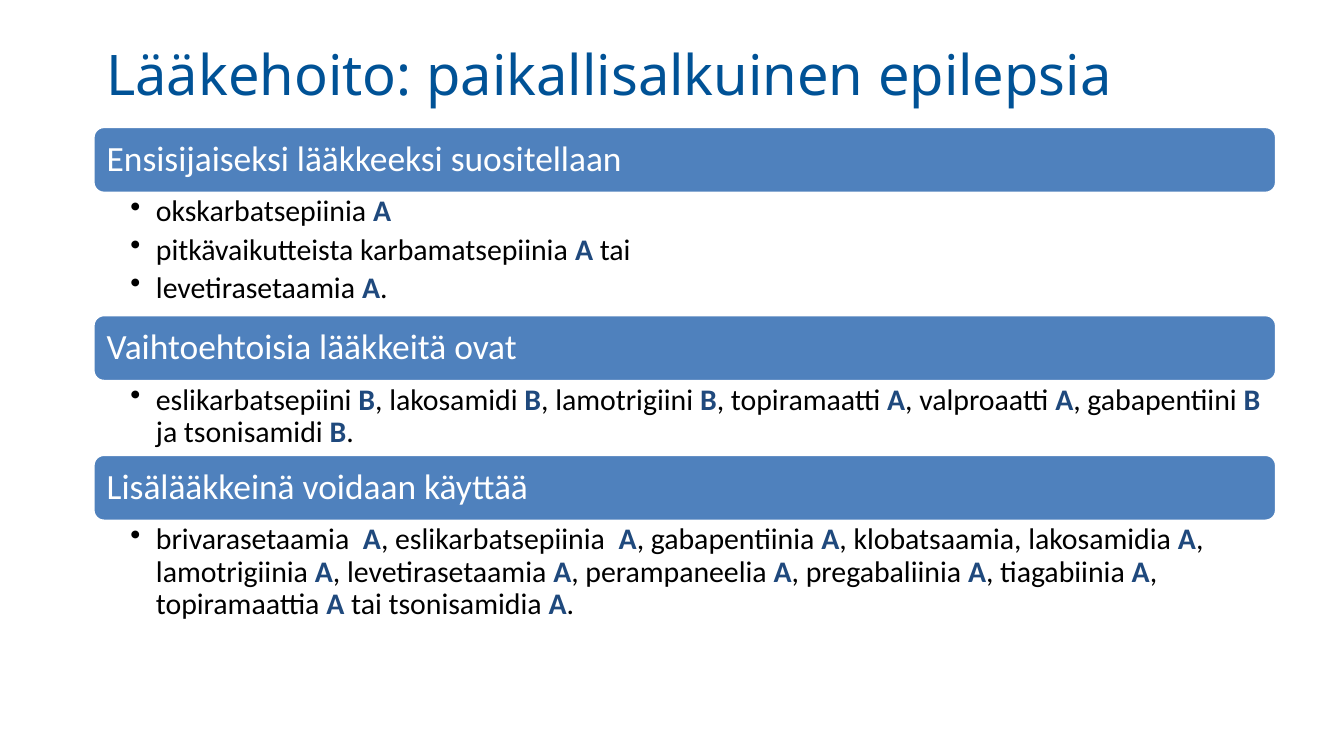
"""Build a slide on drug treatment of focal-onset epilepsy."""
from lxml.etree import SubElement
from pptx import Presentation
from pptx.dml.color import RGBColor
from pptx.enum.shapes import MSO_SHAPE
from pptx.enum.text import MSO_ANCHOR, PP_ALIGN
from pptx.oxml.ns import qn
from pptx.util import Inches, Pt

TITLE = "Lääkehoito: paikallisalkuinen epilepsia"
SECTIONS = [
    ("Ensisijaiseksi lääkkeeksi suositellaan", 0.9, [
        "okskarbatsepiinia *A*",
        "pitkävaikutteista karbamatsepiinia *A* tai",
        "levetirasetaamia *A*.",
    ]),
    ("Vaihtoehtoisia lääkkeitä ovat", 0.54, [
        "eslikarbatsepiini *B*, lakosamidi *B*, lamotrigiini *B*, topiramaatti *A*, "
        "valproaatti *A*, gabapentiini *B* ja tsonisamidi *B*.",
    ]),
    ("Lisälääkkeinä voidaan käyttää", 0.8, [
        "brivarasetaamia  *A*, eslikarbatsepiinia  *A*, gabapentiinia *A*, "
        "klobatsaamia, lakosamidia *A*, lamotrigiinia *A*, levetirasetaamia *A*, "
        "perampaneelia *A*, pregabaliinia *A*, tiagabiinia *A*, "
        "topiramaattia *A *tai tsonisamidia *A*.",
    ]),
]
SLIDE_WIDTH = 10
SLIDE_HEIGHT = SLIDE_WIDTH * 9 / 16
LEFT, WIDTH = 0.69, 8.81
FIRST_TOP, HEADING_HEIGHT = 0.94, 0.5


def rgb(code):
    return RGBColor.from_string(code)


def set_margins(frame, left, top, right, bottom):
    frame.margin_left, frame.margin_top = Inches(left), Inches(top)
    frame.margin_right, frame.margin_bottom = Inches(right), Inches(bottom)
    frame.word_wrap = True


def write(paragraph, text, size, color, font="Calibri", spacing=0.9, after=0, bullet=False):
    paragraph.alignment = PP_ALIGN.LEFT
    paragraph.line_spacing = spacing
    paragraph.space_after = Pt(after)
    if bullet:
        paragraph.level = 1
        properties = paragraph._p.get_or_add_pPr()
        properties.set("marL", str(Inches(0.19)))
        properties.set("indent", str(-Inches(0.19)))
        SubElement(properties, qn("a:buChar")).set("char", "•")
    paragraph.font.name = font
    paragraph.font.size = Pt(size)
    for index, part in enumerate(text.split("*")):
        if part:
            is_grade = index % 2 == 1
            run = paragraph.add_run()
            run.text = part
            run.font.name = font
            run.font.size = Pt(size)
            run.font.bold = is_grade
            run.font.color.rgb = rgb("1F497D" if is_grade else color)


def add_heading(slide, text, top):
    heading = slide.shapes.add_shape(
        MSO_SHAPE.ROUNDED_RECTANGLE,
        Inches(LEFT), Inches(top), Inches(WIDTH), Inches(HEADING_HEIGHT))
    heading.shadow.inherit = False
    heading.fill.solid()
    heading.fill.fore_color.rgb = rgb("4F81BD")
    heading.line.color.rgb = rgb("FFFFFF")
    heading.line.width = Pt(2)
    frame = heading.text_frame
    set_margins(frame, 0.08, 0.08, 0.08, 0.08)
    frame.vertical_anchor = MSO_ANCHOR.MIDDLE
    write(frame.paragraphs[0], text, 19, "FFFFFF")


def add_drugs(slide, drugs, top, height):
    frame = slide.shapes.add_textbox(
        Inches(LEFT), Inches(top), Inches(WIDTH), Inches(height)).text_frame
    set_margins(frame, 0.28, 0.02, 0.12, 0.02)
    for index, drug in enumerate(drugs):
        paragraph = frame.add_paragraph() if index else frame.paragraphs[0]
        write(paragraph, drug, 16, "000000", after=3.2, bullet=True)


def main():
    presentation = Presentation()
    presentation.slide_width = Inches(SLIDE_WIDTH)
    presentation.slide_height = Inches(SLIDE_HEIGHT)
    slide = presentation.slides.add_slide(presentation.slide_layouts[5])
    title = slide.shapes.title
    title.left, title.top = Inches(LEFT), Inches(0.24)
    title.width, title.height = Inches(8.62), Inches(0.61)
    set_margins(title.text_frame, 0.1, 0.02, 0.1, 0.02)
    title.text_frame.vertical_anchor = MSO_ANCHOR.MIDDLE
    write(title.text_frame.paragraphs[0], TITLE, 30, "005296", font="Noto Sans", spacing=1.0)
    top = FIRST_TOP
    for heading, drugs_height, drugs in SECTIONS:
        add_heading(slide, heading, top)
        add_drugs(slide, drugs, top + HEADING_HEIGHT, drugs_height)
        top += HEADING_HEIGHT + drugs_height
    presentation.save("out.pptx")


if __name__ == "__main__":
    main()
